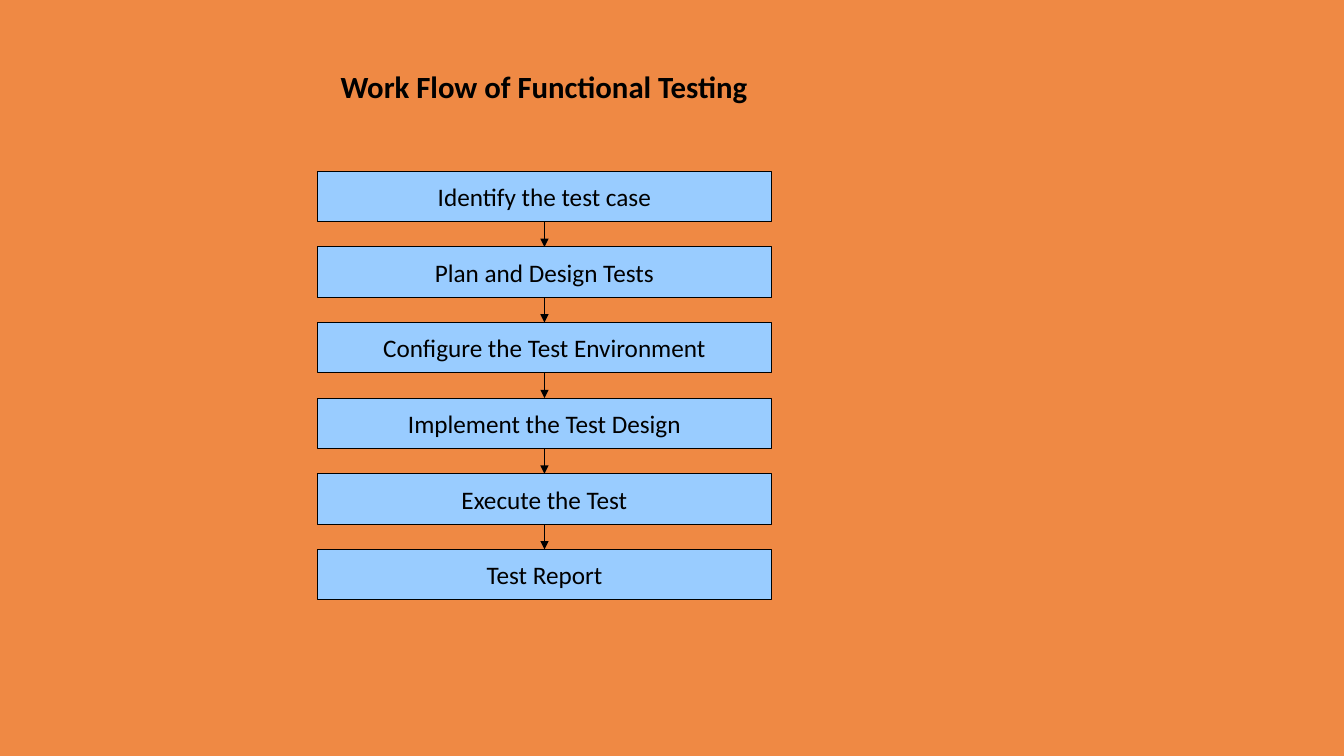
from dataclasses import dataclass

from lxml.etree import SubElement
from pptx import Presentation
from pptx.dml.color import RGBColor
from pptx.enum.shapes import MSO_CONNECTOR, MSO_SHAPE
from pptx.enum.text import MSO_ANCHOR, PP_ALIGN
from pptx.oxml.ns import qn
from pptx.util import Emu, Pt


@dataclass(frozen=True)
class Theme:
    font: str = "Calibri"
    background: RGBColor = RGBColor.from_string("EF8944")
    step: RGBColor = RGBColor.from_string("99CCFF")
    ink: RGBColor = RGBColor.from_string("000000")
    title_size: Pt = Pt(22)
    step_size: Pt = Pt(18)
    line_width: Pt = Pt(0.75)


THEME = Theme()
EMU_PER_PX = 9144


def px(length):
    return Emu(length * EMU_PER_PX)


def add_span(para, text, size, bold=False):
    span = para.add_run()
    span.text = text
    span.font.name = THEME.font
    span.font.size = size
    span.font.bold = bold
    span.font.color.rgb = THEME.ink


STEPS = [
    "Identify the test case",
    "Plan and Design Tests",
    "Configure the Test Environment",
    "Implement the Test Design",
    "Execute the Test",
    "Test Report",
]
STEP_LEFT, STEP_TOP = 315, 170
STEP_WIDTH, STEP_HEIGHT = 450, 50
STEP_PITCH = 75
ARROW_X = STEP_LEFT + STEP_WIDTH // 2
TITLE_INDENT = 61

deck = Presentation()
deck.slide_width, deck.slide_height = px(1333), px(750)
page = deck.slides.add_slide(deck.slide_layouts[6])
page.background.fill.solid()
page.background.fill.fore_color.rgb = THEME.background

title = page.shapes.add_textbox(px(267), px(62), px(800), px(40))
title.text_frame.word_wrap = True
title_para = title.text_frame.paragraphs[0]
title_para._p.get_or_add_pPr().set("marL", str(px(TITLE_INDENT)))
add_span(title_para, "Work Flow of Functional Testing", THEME.title_size, bold=True)

for index, step in enumerate(STEPS):
    top = STEP_TOP + index * STEP_PITCH
    box = page.shapes.add_shape(
        MSO_SHAPE.RECTANGLE, px(STEP_LEFT), px(top), px(STEP_WIDTH), px(STEP_HEIGHT)
    )
    box.shadow.inherit = False
    box.fill.solid()
    box.fill.fore_color.rgb = THEME.step
    box.line.color.rgb = THEME.ink
    box.line.width = THEME.line_width
    box.text_frame.word_wrap = False
    box.text_frame.vertical_anchor = MSO_ANCHOR.MIDDLE
    para = box.text_frame.paragraphs[0]
    para.alignment = PP_ALIGN.CENTER
    add_span(para, step, THEME.step_size)

for index in range(len(STEPS) - 1):
    top = STEP_TOP + index * STEP_PITCH
    arrow = page.shapes.add_connector(
        MSO_CONNECTOR.STRAIGHT,
        px(ARROW_X), px(top + STEP_HEIGHT), px(ARROW_X), px(top + STEP_PITCH),
    )
    arrow.line.color.rgb = THEME.ink
    arrow.line.width = THEME.line_width
    SubElement(arrow.line._get_or_add_ln(), qn("a:tailEnd"), type="triangle")
    SubElement(arrow._element.spPr, qn("a:effectLst"))

deck.save("out.pptx")
